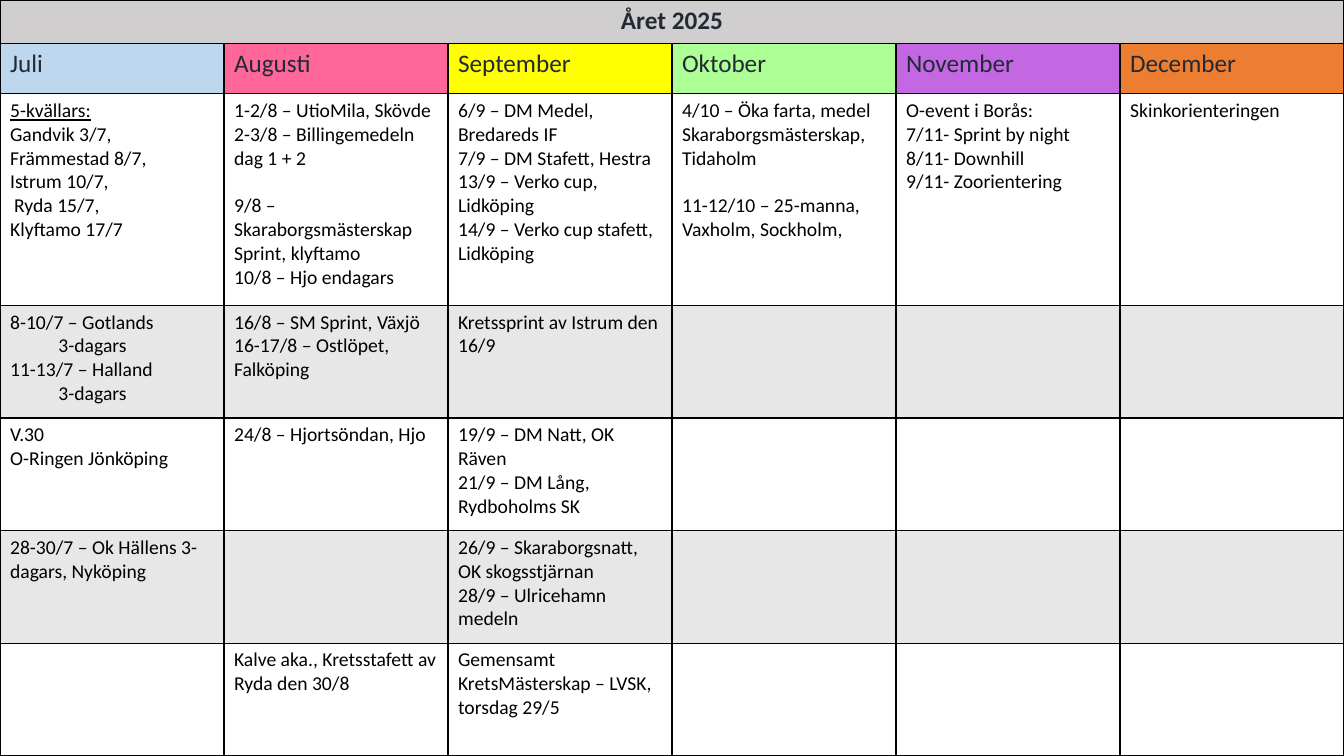
from lxml.etree import SubElement
from pptx import Presentation
from pptx.dml.color import RGBColor
from pptx.enum.text import PP_ALIGN
from pptx.oxml.ns import qn
from pptx.util import Inches, Pt

INK = RGBColor(0x22, 0x2A, 0x35)
BLACK = RGBColor(0x00, 0x00, 0x00)
WHITE = RGBColor(0xFF, 0xFF, 0xFF)
BAND = RGBColor(0xE7, 0xE7, 0xE7)
TITLE_FILL = RGBColor(0xD0, 0xCE, 0xCE)

# Content: an event is a line, or (line, style) where the style is a key below
TITLE = "Året 2025"
MONTHS = [
    ("Juli", RGBColor(0xBD, 0xD7, 0xEE)),
    ("Augusti", RGBColor(0xFF, 0x66, 0x99)),
    ("September", RGBColor(0xFF, 0xFF, 0x00)),
    ("Oktober", RGBColor(0xAD, 0xFE, 0x94)),
    ("November", RGBColor(0xC3, 0x67, 0xE3)),
    ("December", RGBColor(0xED, 0x7D, 0x31)),
]
STYLES = {
    "plain": {},
    "heading": {"underline": True},
    "gap": {"space": 17},
    "nudge": {"indent": 0.04},
    "indent": {"indent": 0.48},
}
EVENTS = [
    [
        [("5-kvällars:", "heading"), "Gandvik 3/7, Främmestad 8/7,",
         "Istrum 10/7,", ("Ryda 15/7,", "nudge"), "Klyftamo 17/7"],
        ["1-2/8 – UtioMila, Skövde", "2-3/8 – Billingemedeln dag 1 + 2",
         ("9/8 – Skaraborgsmästerskap Sprint, klyftamo", "gap"),
         "10/8 – Hjo endagars"],
        ["6/9 – DM Medel, Bredareds IF", "7/9 – DM Stafett, Hestra",
         "13/9 – Verko cup, Lidköping", "14/9 – Verko cup stafett, Lidköping"],
        ["4/10 – Öka farta, medel Skaraborgsmästerskap, Tidaholm",
         ("11-12/10 – 25-manna, Vaxholm, Sockholm,", "gap")],
        ["O-event i Borås:", "7/11- Sprint by night", "8/11- Downhill",
         "9/11- Zoorientering"],
        ["Skinkorienteringen"],
    ],
    [
        ["8-10/7 – Gotlands", ("3-dagars", "indent"),
         "11-13/7 – Halland", ("3-dagars", "indent")],
        ["16/8 – SM Sprint, Växjö", "16-17/8 – Ostlöpet, Falköping"],
        ["Kretssprint av Istrum den 16/9"],
        [], [], [],
    ],
    [
        ["V.30", "O-Ringen Jönköping"],
        ["24/8 – Hjortsöndan, Hjo"],
        ["19/9 – DM Natt, OK Räven", "21/9 – DM Lång, Rydboholms SK"],
        [], [], [],
    ],
    [
        ["28-30/7 – Ok Hällens 3-dagars, Nyköping"],
        [],
        ["26/9 – Skaraborgsnatt, OK skogsstjärnan", "28/9 – Ulricehamn medeln"],
        [], [], [],
    ],
    [
        [],
        ["Kalve aka., Kretsstafett av Ryda den 30/8"],
        ["Gemensamt KretsMästerskap – LVSK, torsdag 29/5"],
        [], [], [],
    ],
]

# Layout
WIDTH, HEIGHT = 13.33, 7.5
TOP_ROWS = [0.43, 0.5, 2.1]
later_weeks = len(EVENTS) - 1
ROW_HEIGHTS = TOP_ROWS + [(HEIGHT - sum(TOP_ROWS)) / later_weeks] * later_weeks


def paint(cell, fill):
    """Solid fill and a thin black border on all four sides."""
    cell.fill.solid()
    cell.fill.fore_color.rgb = fill
    properties = cell._tc.get_or_add_tcPr()
    for place, side in enumerate(("a:lnL", "a:lnR", "a:lnT", "a:lnB")):
        border = SubElement(properties, qn(side), w=str(Pt(1)))
        solid = SubElement(border, qn("a:solidFill"))
        SubElement(solid, qn("a:srgbClr"), val=str(BLACK))
        properties.insert(place, border)


def write(paragraph, text, size, color, bold=False, underline=False,
          space=0, indent=0):
    run = paragraph.add_run()
    run.text = text
    font = run.font
    font.name, font.size, font.bold = "Calibri", Pt(size), bold
    font.underline = underline
    font.color.rgb = color
    if space:
        paragraph.space_before = Pt(space)
    if indent:
        paragraph._p.get_or_add_pPr().set("marL", str(Inches(indent)))


def write_events(cell, events):
    for number, event in enumerate(events):
        text, style = (event, "plain") if isinstance(event, str) else event
        frame = cell.text_frame
        paragraph = frame.add_paragraph() if number else frame.paragraphs[0]
        write(paragraph, text, 14, BLACK, **STYLES[style])


prs = Presentation()
prs.slide_width, prs.slide_height = Inches(WIDTH), Inches(HEIGHT)
slide = prs.slides.add_slide(prs.slide_layouts[6])
calendar = slide.shapes.add_table(
    len(ROW_HEIGHTS), len(MONTHS), 0, 0, Inches(WIDTH), Inches(HEIGHT)).table
for row, height in zip(calendar.rows, ROW_HEIGHTS):
    row.height = Inches(height)
for column in calendar.columns:
    column.width = Inches(WIDTH / len(MONTHS))

# Title row across all months
title_cell = calendar.cell(0, 0)
title_cell.merge(calendar.cell(0, len(MONTHS) - 1))
title_line = title_cell.text_frame.paragraphs[0]
title_line.alignment = PP_ALIGN.CENTER
write(title_line, TITLE, 18, INK, bold=True)

# Month headings, then the events under each month
for col, (month, color) in enumerate(MONTHS):
    paint(calendar.cell(0, col), TITLE_FILL)
    month_cell = calendar.cell(1, col)
    paint(month_cell, color)
    write(month_cell.text_frame.paragraphs[0], month, 18, INK)
    for week, week_events in enumerate(EVENTS):
        event_cell = calendar.cell(week + 2, col)
        paint(event_cell, BAND if week % 2 else WHITE)
        write_events(event_cell, week_events[col])

prs.save("out.pptx")
